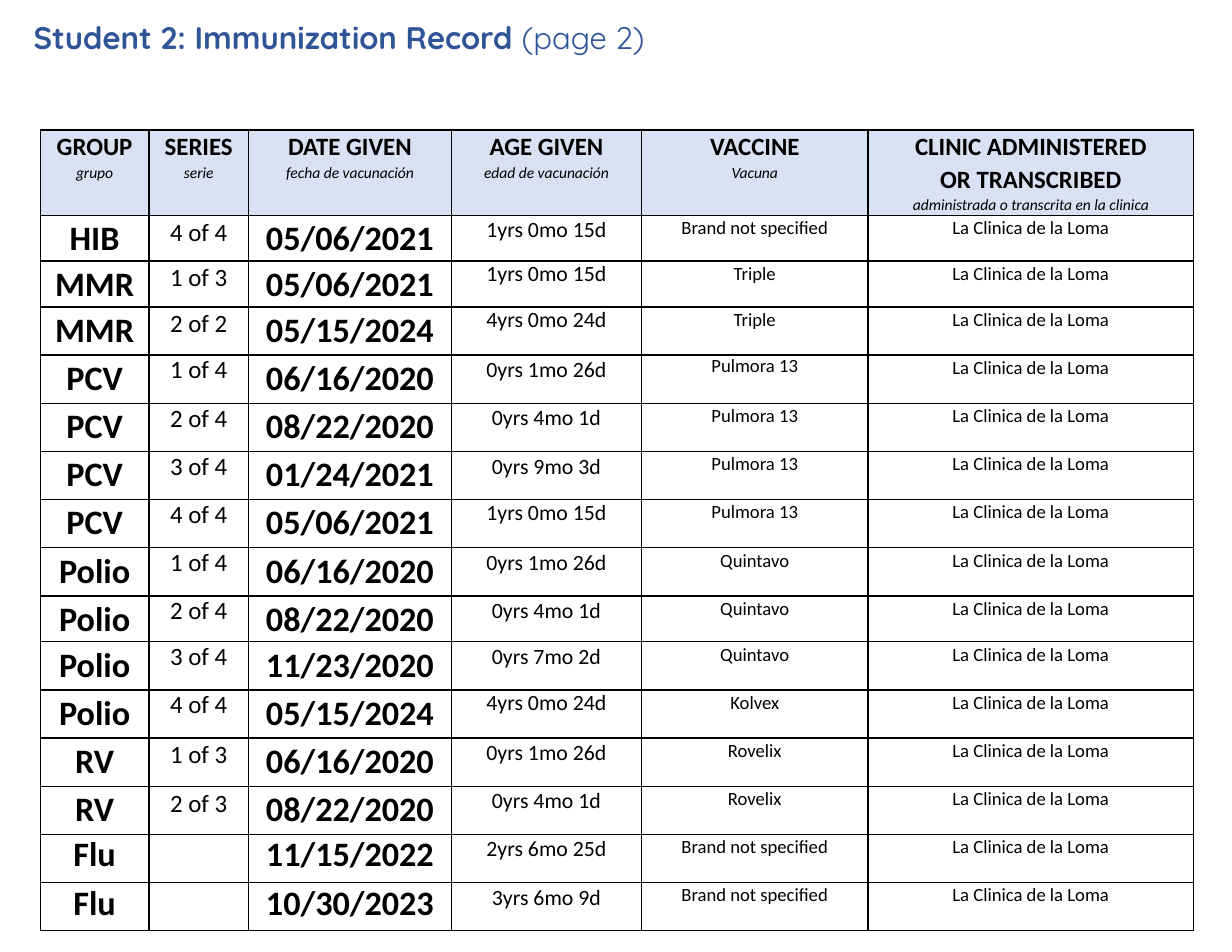
from dataclasses import dataclass

from lxml.etree import SubElement
from pptx import Presentation
from pptx.dml.color import RGBColor
from pptx.enum.text import MSO_ANCHOR, PP_ALIGN
from pptx.oxml.ns import qn
from pptx.util import Inches, Pt


@dataclass(frozen=True)
class Theme:
    title_font: str = "Quicksand"
    table_font: str = "Calibri"
    blue: str = "2F5597"
    black: str = "000000"
    white: str = "FFFFFF"
    header_fill: str = "D9E2F3"
    title_size: int = 20
    heading_size: int = 16
    translation_size: int = 10
    column_sizes: tuple = (22, 16, 22, 14, 12, 12)
    bold_columns: tuple = (0, 2)
    line_spacing: float = 1.07
    border_width: float = 1


CLINIC = "La Clinica de la Loma"
HEADINGS = [
    (["GROUP"], "grupo"),
    (["SERIES"], "serie"),
    (["DATE GIVEN"], "fecha de vacunación"),
    (["AGE GIVEN"], "edad de vacunación"),
    (["VACCINE"], "Vacuna"),
    (["CLINIC ADMINISTERED", "OR TRANSCRIBED"], "administrada o transcrita en la clinica"),
]
RECORDS = [
    ("HIB", "4 of 4", "05/06/2021", "1yrs 0mo 15d", "Brand not specified"),
    ("MMR", "1 of 3", "05/06/2021", "1yrs 0mo 15d", "Triple"),
    ("MMR", "2 of 2", "05/15/2024", "4yrs 0mo 24d", "Triple"),
    ("PCV", "1 of 4", "06/16/2020", "0yrs 1mo 26d", "Pulmora 13"),
    ("PCV", "2 of 4", "08/22/2020", "0yrs 4mo 1d", "Pulmora 13"),
    ("PCV", "3 of 4", "01/24/2021", "0yrs 9mo 3d", "Pulmora 13"),
    ("PCV", "4 of 4", "05/06/2021", "1yrs 0mo 15d", "Pulmora 13"),
    ("Polio", "1 of 4", "06/16/2020", "0yrs 1mo 26d", "Quintavo"),
    ("Polio", "2 of 4", "08/22/2020", "0yrs 4mo 1d", "Quintavo"),
    ("Polio", "3 of 4", "11/23/2020", "0yrs 7mo 2d", "Quintavo"),
    ("Polio", "4 of 4", "05/15/2024", "4yrs 0mo 24d", "Kolvex"),
    ("RV", "1 of 3", "06/16/2020", "0yrs 1mo 26d", "Rovelix"),
    ("RV", "2 of 3", "08/22/2020", "0yrs 4mo 1d", "Rovelix"),
    ("Flu", "", "11/15/2022", "2yrs 6mo 25d", "Brand not specified"),
    ("Flu", "", "10/30/2023", "3yrs 6mo 9d", "Brand not specified"),
]
COLUMN_WIDTHS = [0.97, 0.89, 1.81, 1.7, 2.02, 2.91]
HEADER_HEIGHT, ROW_HEIGHT, SHORT_HEIGHT = 0.7, 0.43, 0.41
SHORT_ROWS = {1, 2, 9}
SINGLE_SPACED = {0: {14, 15}, 1: set(range(4, 12)), 2: {14, 15}, 3: {2, 3, 7, 11}, 4: {4}}


def apply(target, values):
    for name, value in values.items():
        setattr(target, name, value)


class SlideWriter:
    def __init__(self, slide, theme):
        self.slide = slide
        self.theme = theme

    def span(self, para, text, font, size, color, bold=False, italic=False):
        span = para.add_run()
        span.text = text
        apply(span.font, {"name": font, "size": Pt(size), "bold": bold, "italic": italic})
        span.font.color.rgb = RGBColor.from_string(color)

    def title(self, spans, left, top, width, height):
        theme = self.theme
        box = self.slide.shapes.title
        apply(box, {"left": Inches(left), "top": Inches(top),
                    "width": Inches(width), "height": Inches(height)})
        box.text_frame.vertical_anchor = MSO_ANCHOR.TOP
        para = box.text_frame.paragraphs[0]
        apply(para, {"alignment": PP_ALIGN.LEFT, "line_spacing": 0.9})
        for text, bold in spans:
            self.span(para, text, theme.title_font, theme.title_size, theme.blue, bold)

    def borders(self, cell):
        properties = cell._tc.get_or_add_tcPr()
        for side in ("a:lnL", "a:lnR", "a:lnT", "a:lnB"):
            line = SubElement(properties, qn(side), w=str(Pt(self.theme.border_width)))
            fill = SubElement(line, qn("a:solidFill"))
            SubElement(fill, qn("a:srgbClr"), val=self.theme.black)

    def cell(self, cell, lines, fill, spacing):
        apply(cell, {"margin_left": Inches(0.07), "margin_right": Inches(0.07),
                     "margin_top": 0, "margin_bottom": 0})
        self.borders(cell)
        cell.fill.solid()
        cell.fill.fore_color.rgb = RGBColor.from_string(fill)
        for index, (text, size, bold, italic) in enumerate(lines):
            frame = cell.text_frame
            para = frame.add_paragraph() if index else frame.paragraphs[0]
            apply(para, {"alignment": PP_ALIGN.CENTER, "line_spacing": spacing})
            if text:
                self.span(para, text, self.theme.table_font, size, self.theme.black, bold, italic)

    def record_table(self, left, top):
        theme = self.theme
        heights = [HEADER_HEIGHT] + [
            SHORT_HEIGHT if row in SHORT_ROWS else ROW_HEIGHT
            for row in range(1, len(RECORDS) + 1)
        ]
        table = self.slide.shapes.add_table(
            len(heights), len(COLUMN_WIDTHS), Inches(left), Inches(top),
            Inches(sum(COLUMN_WIDTHS)), Inches(sum(heights))).table
        apply(table, {"first_row": False, "horz_banding": False})
        for column, width in zip(table.columns, COLUMN_WIDTHS):
            column.width = Inches(width)
        for row, height in zip(table.rows, heights):
            row.height = Inches(height)
        for column, (names, translation) in enumerate(HEADINGS):
            lines = [(name, theme.heading_size, True, False) for name in names]
            lines.append((translation, theme.translation_size, False, True))
            self.cell(table.cell(0, column), lines, theme.header_fill, theme.line_spacing)
        for row, record in enumerate(RECORDS, 1):
            for column, text in enumerate((*record, CLINIC)):
                single = row in SINGLE_SPACED.get(column, ())
                line = (text, theme.column_sizes[column], column in theme.bold_columns, False)
                self.cell(table.cell(row, column), [line], theme.white,
                          1.0 if single else theme.line_spacing)


def main():
    deck = Presentation()
    apply(deck, {"slide_width": Inches(11), "slide_height": Inches(8.5)})
    page = SlideWriter(deck.slides.add_slide(deck.slide_layouts[5]), Theme())
    page.title([("Student 2: Immunization Record ", True), ("(page 2)", False)],
               0.2, 0.15, 9.49, 0.47)
    page.record_table(0.36, 1.16)
    deck.save("out.pptx")


if __name__ == "__main__":
    main()
